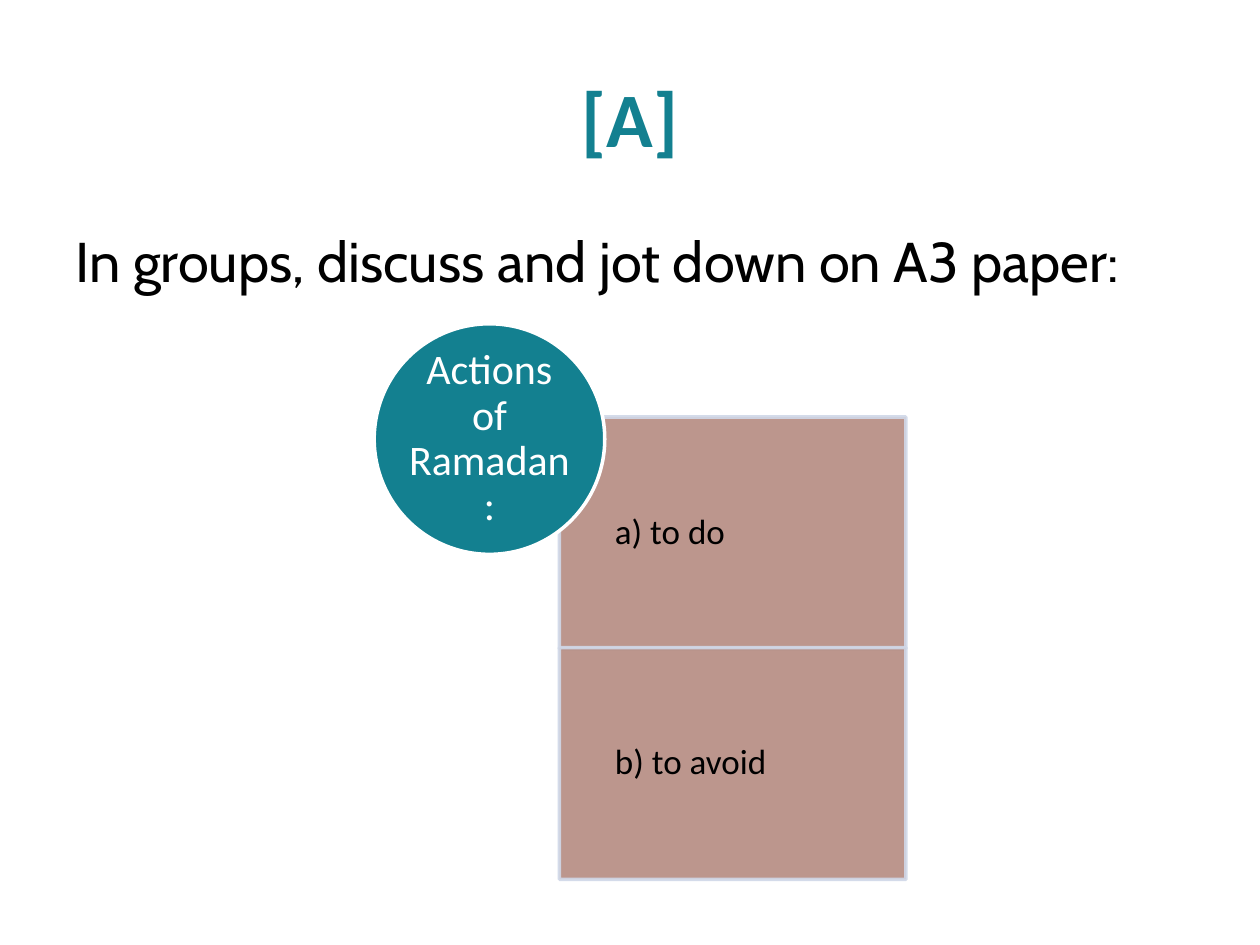
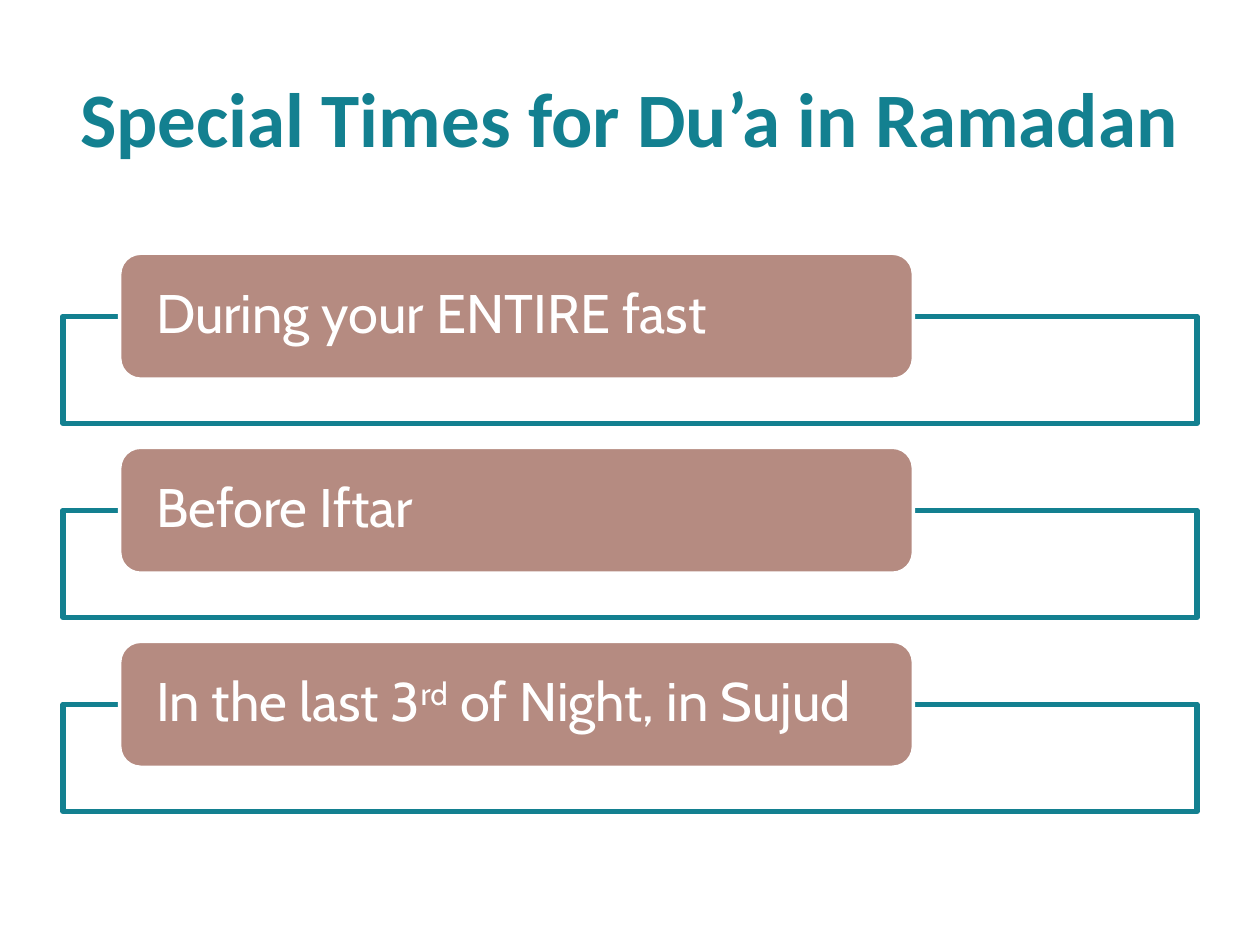
from lxml.etree import SubElement
from pptx import Presentation
from pptx.dml.color import RGBColor
from pptx.enum.shapes import MSO_SHAPE
from pptx.enum.text import MSO_ANCHOR, PP_ALIGN
from pptx.oxml.ns import qn
from pptx.util import Inches, Pt

# Shared style
TEAL, ROSE, PALE, WHITE, BLACK = "138090", "B58B81", "D0D8E8", "FFFFFF", "000000"
HEAD_FONT, BODY_FONT = "Calibri", "Cabin"


def paint(color_format, color, alpha=100):
    """Set a fill or line colour, with opacity in percent."""
    color_format.solid()
    color_format.fore_color.rgb = RGBColor.from_string(color)
    if alpha < 100:
        for srgb in color_format._xPr.iter(qn("a:srgbClr")):
            if srgb.getparent().getparent() is color_format._xPr:
                SubElement(srgb, qn("a:alpha"), val=str(alpha * 1000))


def write(sp, runs, size, color, font=HEAD_FONT, bold=False, align=PP_ALIGN.LEFT,
          anchor=MSO_ANCHOR.MIDDLE, insets=(0.1, 0.05, 0.1, 0.05), spacing=None):
    """Fill a shape with one paragraph; runs are (text, baseline percent) pairs."""
    tf = sp.text_frame
    tf.word_wrap = True
    tf.vertical_anchor = anchor
    tf.margin_left, tf.margin_top, tf.margin_right, tf.margin_bottom = map(Inches, insets)
    p = tf.paragraphs[0]
    p.alignment = align
    p.line_spacing = spacing
    p.font.size = Pt(size)
    p.font.name = font
    p.font.bold = bold
    p.font.color.rgb = RGBColor.from_string(color)
    for text, baseline in runs:
        r = p.add_run()
        r.text = text
        if baseline:
            r._r.get_or_add_rPr().set("baseline", str(baseline * 1000))


def add_box(s, kind, at, fill, line, width, alpha=100, line_alpha=100):
    sp = s.shapes.add_shape(kind, *map(Inches, at))
    sp.shadow.inherit = False
    paint(sp.fill, fill, alpha)
    sp.line.width = Pt(width)
    paint(sp.line.fill, line, line_alpha)
    return sp


def add_text(s, at, text, size, color, **style):
    sp = s.shapes.add_textbox(*map(Inches, at))
    write(sp, [(text, 0)], size, color, **style)


def add_titled_slide(prs, title):
    s = prs.slides.add_slide(prs.slide_layouts[6])
    add_text(s, (0.5, 0.3, 9, 1.25), title, 44, TEAL, bold=True, align=PP_ALIGN.CENTER)
    return s


def add_action_panel(s, top, text):
    sp = add_box(s, MSO_SHAPE.RECTANGLE, (4.44, top, 2.75, 1.84), ROSE, PALE, 2, 90, 90)
    write(sp, [(text, 0)], 20, BLACK, insets=(0.44, 0.16, 0.16, 0.16), spacing=0.9)


def add_time_row(s, top, runs):
    add_box(s, MSO_SHAPE.RECTANGLE, (0.5, top + 0.5, 9, 0.85), WHITE, TEAL, 3, 90)
    sp = add_box(s, MSO_SHAPE.ROUNDED_RECTANGLE, (0.95, top, 6.3, 1), ROSE, WHITE, 2)
    write(sp, runs, 31, WHITE, font=BODY_FONT, insets=(0.24, 0, 0.24, 0), spacing=0.9)


def main():
    prs = Presentation()
    prs.slide_width, prs.slide_height = Inches(10), Inches(7.5)

    # Group discussion
    s = add_titled_slide(prs, "[A]")
    add_text(s, (0.5, 1.75, 9, 4.95), "In groups, discuss and jot down on A3 paper:",
             32, BLACK, font=BODY_FONT, anchor=MSO_ANCHOR.TOP)
    for i, action in enumerate(["a) to do", "b) to avoid"]):
        add_action_panel(s, 3.31 + i * 1.83, action)
    circle = add_box(s, MSO_SHAPE.OVAL, (2.97, 2.57, 1.83, 1.83), TEAL, WHITE, 2)
    write(circle, [("Actions of Ramadan:", 0)], 24, WHITE, align=PP_ALIGN.CENTER,
          insets=(0, 0, 0, 0), spacing=0.9)

    # Special times
    s = add_titled_slide(prs, "Special Times for Du’a in Ramadan")
    times = [
        [("During your ENTIRE fast", 0)],
        [("Before Iftar", 0)],
        [("In the last 3", 0), ("rd", 30), (" of Night, in Sujud", 0)],
    ]
    for i, runs in enumerate(times):
        add_time_row(s, 2.01 + i * 1.54, runs)

    prs.save("out.pptx")


if __name__ == "__main__":
    main()
